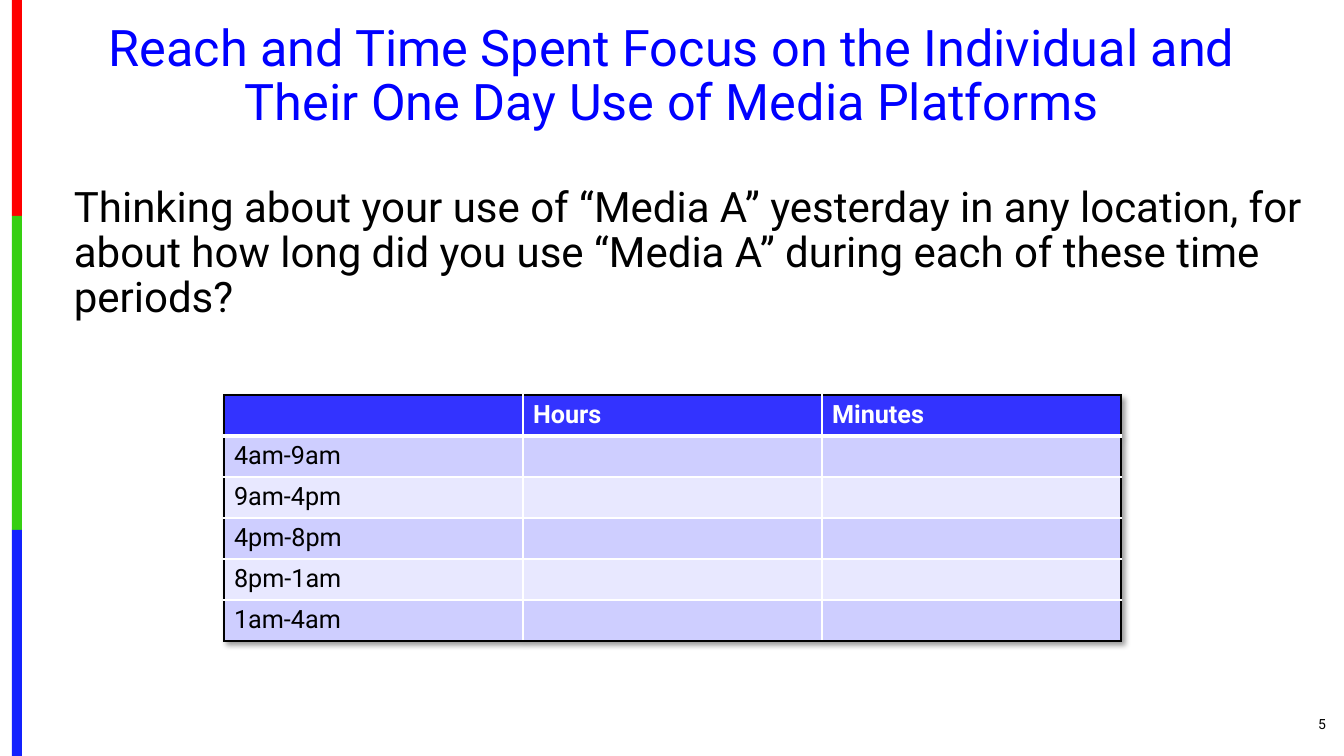
from dataclasses import dataclass

from lxml import etree
from pptx import Presentation
from pptx.dml.color import RGBColor
from pptx.enum.shapes import MSO_SHAPE
from pptx.enum.text import MSO_ANCHOR, MSO_AUTO_SIZE, PP_ALIGN
from pptx.oxml import parse_xml
from pptx.oxml.ns import qn
from pptx.util import Pt

RECTANGLE = MSO_SHAPE.RECTANGLE
TOP, MIDDLE = MSO_ANCHOR.TOP, MSO_ANCHOR.MIDDLE
LEFT, CENTER, RIGHT = PP_ALIGN.LEFT, PP_ALIGN.CENTER, PP_ALIGN.RIGHT
NO_AUTOFIT = MSO_AUTO_SIZE.NONE
EMU_PER_PX = 12192000 / 1344


@dataclass(frozen=True)
class Theme:
    font: str = "Roboto"
    title: str = "0000FF"
    text: str = "000000"
    white: str = "FFFFFF"
    red: str = "FE0000"
    green: str = "36CF12"
    blue: str = "1322FE"
    header: str = "3333FF"
    bands: tuple = ("CECEFF", "E8E8FF")
    title_size: int = 36
    question_size: int = 30
    table_size: int = 18
    number_size: int = 10


THEME = Theme()


def px(*lengths):
    return [round(length * EMU_PER_PX) for length in lengths]


def write(frame, text, size, color, align=LEFT, spacing=1.0, bold=False):
    """Put one formatted run into the first paragraph of a text frame."""
    para = frame.paragraphs[0]
    para.alignment = align
    para.line_spacing = spacing
    span = para.add_run()
    span.text = text
    span.font.name = THEME.font
    span.font.size = Pt(size)
    span.font.bold = bold
    span.font.color.rgb = RGBColor.from_string(color)


deck = Presentation()
deck.slide_width, deck.slide_height = px(1344, 756)
page = deck.slides.add_slide(deck.slide_layouts[5])

# Coloured side bar
bar_top = 0
for height, color in ((216, THEME.red), (314, THEME.green), (226, THEME.blue)):
    bar = page.shapes.add_shape(RECTANGLE, *px(12, bar_top, 10, height))
    bar.shadow.inherit = False
    bar.fill.solid()
    bar.fill.fore_color.rgb = RGBColor.from_string(color)
    bar.line.fill.background()
    bar_top += height

# Title, question and page number
title = page.shapes.title
title.left, title.top, title.width, title.height = px(46, 17, 1252, 120)
question = page.shapes.add_textbox(*px(64, 181, 1251, 163))
number = page.shapes.add_textbox(*px(1227, 704, 109, 40))
for box, anchor in ((title, MIDDLE), (question, TOP), (number, MIDDLE)):
    box.text_frame.word_wrap = True
    box.text_frame.auto_size = NO_AUTOFIT
    box.text_frame.vertical_anchor = anchor

write(title.text_frame,
      "Reach and Time Spent Focus on the Individual and Their One Day Use of Media Platforms",
      THEME.title_size, THEME.title, CENTER, 0.9)
write(question.text_frame,
      "Thinking about your use of “Media A” yesterday in any location, for about how long "
      "did you use “Media A” during each of these time periods?",
      THEME.question_size, THEME.text, spacing=0.9)
write(number.text_frame, "5", THEME.number_size, THEME.text, RIGHT)

# Time table
headings = ("", "Hours", "Minutes")
periods = ("4am-9am", "9am-4pm", "4pm-8pm", "8pm-1am", "1am-4am")
rows = [headings] + [(period, "", "") for period in periods]
last_row, last_column = len(rows) - 1, len(headings) - 1
column_width, row_height = px(299, 41)
table = page.shapes.add_table(
    len(rows), len(headings), *px(224, 395, 897, 246)).table
table.horz_banding = False
for column in table.columns:
    column.width = column_width

for row_index, labels in enumerate(rows):
    table.rows[row_index].height = row_height
    is_header = row_index == 0
    fill = THEME.header if is_header else THEME.bands[(row_index - 1) % 2]
    for column_index, label in enumerate(labels):
        cell = table.cell(row_index, column_index)
        cell.fill.solid()
        cell.fill.fore_color.rgb = RGBColor.from_string(fill)
        if label:
            write(cell.text_frame, label, THEME.table_size,
                  THEME.white if is_header else THEME.text, bold=is_header)

        # Black on the outside, white inside, thick white around the header's foot
        edges = (
            ("a:lnL", column_index == 0, 1),
            ("a:lnR", column_index == last_column, 1),
            ("a:lnT", is_header, 3 if row_index == 1 else 1),
            ("a:lnB", row_index == last_row, 3 if is_header else 1),
        )
        properties = cell._tc.get_or_add_tcPr()
        for position, (tag, is_outer, width) in enumerate(edges):
            edge = etree.Element(qn(tag), w=str(Pt(width)))
            paint = etree.SubElement(edge, qn("a:solidFill"))
            etree.SubElement(paint, qn("a:srgbClr"),
                             val=THEME.text if is_outer else THEME.white)
            properties.insert(position, edge)

shadow = parse_xml(
    '<a:effectLst xmlns:a="http://schemas.openxmlformats.org/drawingml/2006/main">'
    '<a:outerShdw blurRad="50800" dist="38100" dir="2700000" algn="tl" rotWithShape="0">'
    f'<a:srgbClr val="{THEME.text}"><a:alpha val="40000"/></a:srgbClr>'
    '</a:outerShdw></a:effectLst>')
table._tbl.tblPr.insert(0, shadow)

deck.save("out.pptx")
